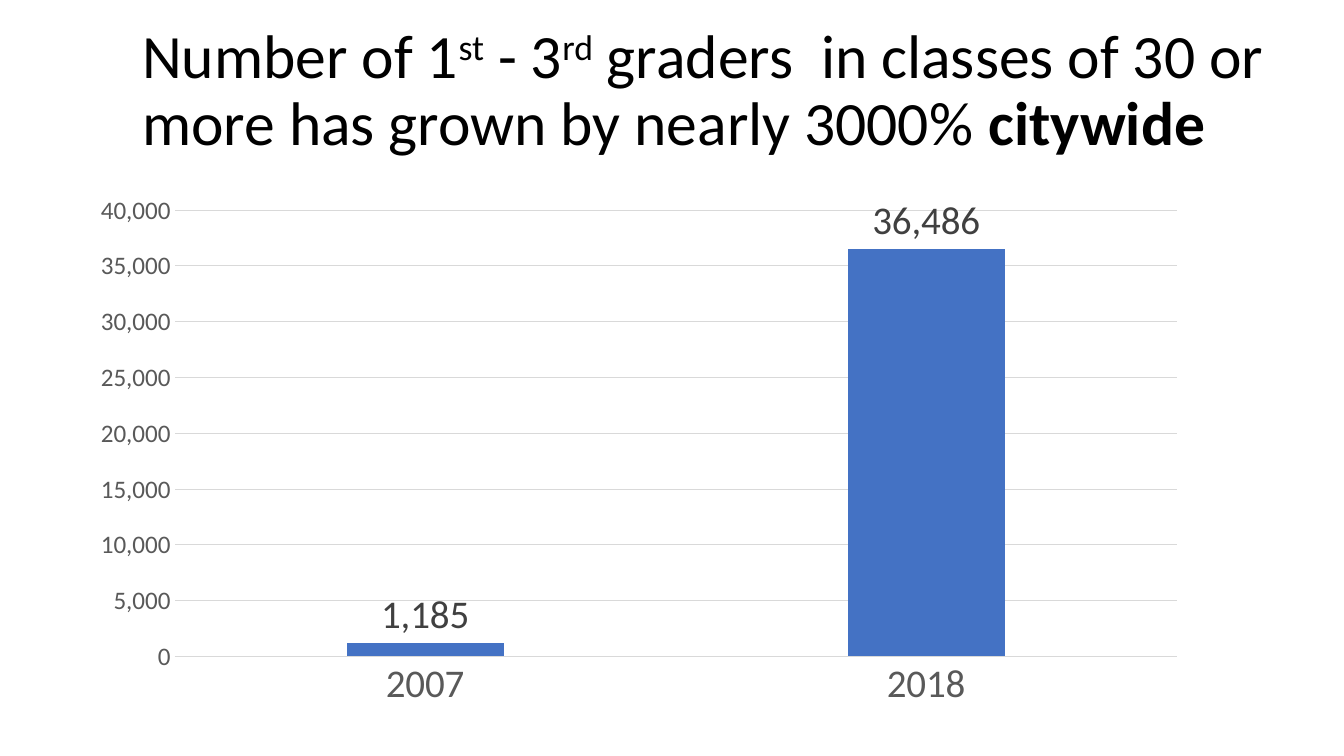
from lxml import etree
from pptx import Presentation
from pptx.chart.data import CategoryChartData
from pptx.dml.color import RGBColor
from pptx.enum.chart import XL_CHART_TYPE, XL_LABEL_POSITION, XL_TICK_MARK
from pptx.enum.text import MSO_ANCHOR, MSO_AUTO_SIZE, PP_ALIGN
from pptx.oxml.ns import qn
from pptx.util import Cm, Pt

COLUMNS = XL_CHART_TYPE.COLUMN_CLUSTERED
OUTSIDE_END = XL_LABEL_POSITION.OUTSIDE_END
NO_TICK = XL_TICK_MARK.NONE
MIDDLE = MSO_ANCHOR.MIDDLE
NO_AUTOFIT = MSO_AUTO_SIZE.NONE
LEFT = PP_ALIGN.LEFT

BLACK = RGBColor(0x00, 0x00, 0x00)
BLUE = RGBColor(0x44, 0x72, 0xC4)
DARK_GREY = RGBColor(0x40, 0x40, 0x40)
AXIS_GREY = RGBColor(0x59, 0x59, 0x59)
LINE_GREY = RGBColor(0xD9, 0xD9, 0xD9)
FONT = "Calibri"

TITLE_ONLY = 5
TITLE_BOX = (Cm(3.33), Cm(0.48), Cm(29.21), Cm(3.68))
CHART_BOX = (Cm(2.54), Cm(4.17), Cm(27.61), Cm(13.92))

# Title runs: text, superscript, bold
TITLE_RUNS = [
    ("Number of 1", False, False),
    ("st", True, False),
    (" - 3", False, False),
    ("rd", True, False),
    (" graders  in classes of 30 or more has grown by nearly 3000% ", False, False),
    ("citywide", False, True),
]
GRADERS = {"2007": 1185, "2018": 36486}
PLOT_LAYOUT = {"layoutTarget": "inner", "xMode": "edge", "yMode": "edge",
               "x": 0.063, "y": 0.081, "w": 0.919, "h": 0.808}


def set_attributes(target, values):
    for name, value in values.items():
        setattr(target, name, value)


def format_font(font, size, color, bold=False):
    set_attributes(font, {"name": FONT, "size": Pt(size), "bold": bold})
    font.color.rgb = color


def format_line(line):
    line.color.rgb = LINE_GREY
    line.width = Pt(0.75)


def place_title(slide, box):
    title = slide.shapes.title
    set_attributes(title, dict(zip(("left", "top", "width", "height"), box)))
    set_attributes(title.text_frame, {"word_wrap": True, "auto_size": NO_AUTOFIT,
                                      "vertical_anchor": MIDDLE})
    paragraph = title.text_frame.paragraphs[0]
    set_attributes(paragraph, {"alignment": LEFT, "line_spacing": 0.9})
    for text, superscript, bold in TITLE_RUNS:
        run = paragraph.add_run()
        run.text = text
        format_font(run.font, 44, BLACK, bold)
        if superscript:
            run._r.get_or_add_rPr().set("baseline", "30000")


def set_plot_layout(chart):
    plot_area = chart._chartSpace.chart.plotArea
    for layout in plot_area.findall(qn("c:layout")):
        plot_area.remove(layout)
    layout = etree.Element(qn("c:layout"))
    manual = etree.SubElement(layout, qn("c:manualLayout"))
    for name, value in PLOT_LAYOUT.items():
        etree.SubElement(manual, qn(f"c:{name}")).set("val", str(value))
    plot_area.insert(0, layout)


def place_chart(slide, box):
    data = CategoryChartData(number_format="#,##0")
    data.categories = list(GRADERS)
    data.add_series("Series 1", list(GRADERS.values()))
    chart = slide.shapes.add_chart(COLUMNS, *box, data).chart
    set_attributes(chart, {"has_legend": False, "has_title": False})
    format_font(chart.font, 10, BLACK)
    set_plot_layout(chart)

    # Columns and their labels
    plot = chart.plots[0]
    set_attributes(plot, {"gap_width": 219, "overlap": -27,
                          "vary_by_categories": False})
    series = plot.series[0]
    series.format.fill.solid()
    series.format.fill.fore_color.rgb = BLUE
    labels = series.data_labels
    set_attributes(labels, {"show_value": True, "position": OUTSIDE_END,
                            "number_format": "#,##0",
                            "number_format_is_linked": False})
    format_font(labels.font, 28, DARK_GREY)

    # Axes and gridlines
    for axis, size in ((chart.category_axis, 28), (chart.value_axis, 18)):
        set_attributes(axis, {"major_tick_mark": NO_TICK,
                              "minor_tick_mark": NO_TICK})
        format_font(axis.tick_labels.font, size, AXIS_GREY)
    format_line(chart.category_axis.format.line)
    value_axis = chart.value_axis
    set_attributes(value_axis, {"minimum_scale": 0, "maximum_scale": 40000,
                                "major_unit": 5000, "has_major_gridlines": True})
    set_attributes(value_axis.tick_labels, {"number_format": "#,##0",
                                            "number_format_is_linked": False})
    value_axis.format.line.fill.background()
    format_line(value_axis.major_gridlines.format.line)


def main():
    presentation = Presentation()
    set_attributes(presentation, {"slide_width": Cm(33.87), "slide_height": Cm(19.05)})
    slide = presentation.slides.add_slide(presentation.slide_layouts[TITLE_ONLY])
    place_title(slide, TITLE_BOX)
    place_chart(slide, CHART_BOX)
    presentation.save("out.pptx")


if __name__ == "__main__":
    main()
